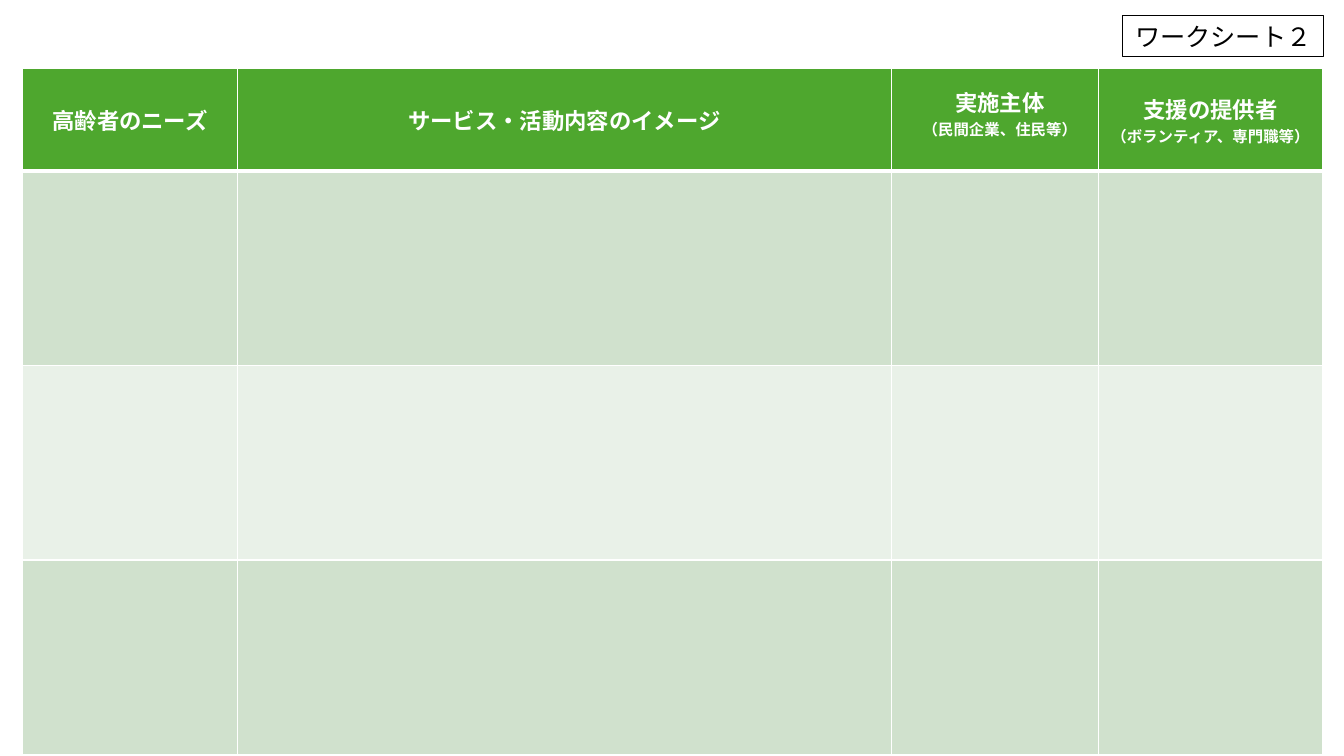
from pptx import Presentation
from pptx.dml.color import RGBColor
from pptx.enum.text import MSO_ANCHOR as ANCHOR, MSO_AUTO_SIZE as AUTO, PP_ALIGN as ALIGN
from pptx.oxml import parse_xml
from pptx.oxml.ns import nsdecls
from pptx.util import Pt

COLUMNS = [153.4, 467.3, 147.6, 160.5]
ROWS = [72.8] + [139] * 3
HEADERS = [
    ["高齢者のニーズ"],
    ["サービス・活動内容のイメージ"],
    ["実施主体", "（民間企業、住民等）"],
    ["支援の提供者", "（ボランティア、専門職等）"],
]
LINE_SIZES = [16, 11]
ROW_FILLS = ["4EA72E", "D0E1CD", "E9F1E8", "D0E1CD"]
RAISED_CELL = {"vertical_anchor": ANCHOR.BOTTOM, "margin_left": Pt(14.4),
               "margin_top": Pt(6), "margin_bottom": Pt(22)}


def rgb(value):
    return RGBColor.from_string(value)


def set_format(target, formats):
    for name, value in formats.items():
        setattr(target, name, value)


class Sheet:
    font = "Noto Sans CJK JP"
    dark, light = "000000", "FFFFFF"

    def __init__(self, prs):
        self.s = prs.slides.add_slide(prs.slide_layouts[5])

    def add_text(self, p, text, size, color, bold=False):
        p.alignment = ALIGN.CENTER
        r = p.add_run()
        r.text = text
        set_format(r.font, {"size": Pt(size), "bold": bold, "name": self.font})
        r.font.color.rgb = rgb(color)
        r._r.get_or_add_rPr().append(
            parse_xml(f'<a:ea {nsdecls("a")} typeface="{self.font}"/>'))

    def title(self, text, left, top, width, height):
        sp = self.s.shapes.title
        set_format(sp, {"left": Pt(left), "top": Pt(top),
                        "width": Pt(width), "height": Pt(height)})
        sp.line.color.rgb = rgb(self.dark)
        sp.line.width = Pt(0.75)
        tf = sp.text_frame
        set_format(tf, {"auto_size": AUTO.NONE, "word_wrap": False,
                        "vertical_anchor": ANCHOR.MIDDLE})
        self.add_text(tf.paragraphs[0], text, 18, self.dark)

    def borders(self, cell, bottom):
        """Draw light cell borders; must run before the cell gets its fill."""
        tc_pr = cell._tc.get_or_add_tcPr()
        for side, width in zip("LRTB", (1, 1, 1, bottom)):
            tc_pr.append(parse_xml(
                f'<a:ln{side} {nsdecls("a")} w="{Pt(width)}"><a:solidFill>'
                f'<a:srgbClr val="{self.light}"/></a:solidFill></a:ln{side}>'))

    def table(self, left, top, columns, rows, fills):
        table = self.s.shapes.add_table(
            len(rows), len(columns), Pt(left), Pt(top),
            Pt(sum(columns)), Pt(sum(rows))).table
        for column, width in zip(table.columns, columns):
            column.width = Pt(width)
        for i, (row, height, fill) in enumerate(zip(table.rows, rows, fills)):
            row.height = Pt(height)
            for cell in row.cells:
                self.borders(cell, bottom=3 if i == 0 else 1)
                cell.fill.solid()
                cell.fill.fore_color.rgb = rgb(fill)
        return table

    def header(self, cell, lines):
        cell.vertical_anchor = ANCHOR.MIDDLE
        tf = cell.text_frame
        for i, (text, size) in enumerate(zip(lines, LINE_SIZES)):
            p = tf.add_paragraph() if i else tf.paragraphs[0]
            self.add_text(p, text, size, self.light, bold=True)


def main():
    prs = Presentation()
    set_format(prs, {"slide_width": Pt(960), "slide_height": Pt(540)})
    sheet = Sheet(prs)
    sheet.title("ワークシート２", 802, 11, 143.5, 29.5)
    table = sheet.table(16.2, 49.2, COLUMNS, ROWS, ROW_FILLS)
    for cell, lines in zip(table.rows[0].cells, HEADERS):
        sheet.header(cell, lines)
    set_format(table.cell(0, 2), RAISED_CELL)
    prs.save("out.pptx")


if __name__ == "__main__":
    main()
